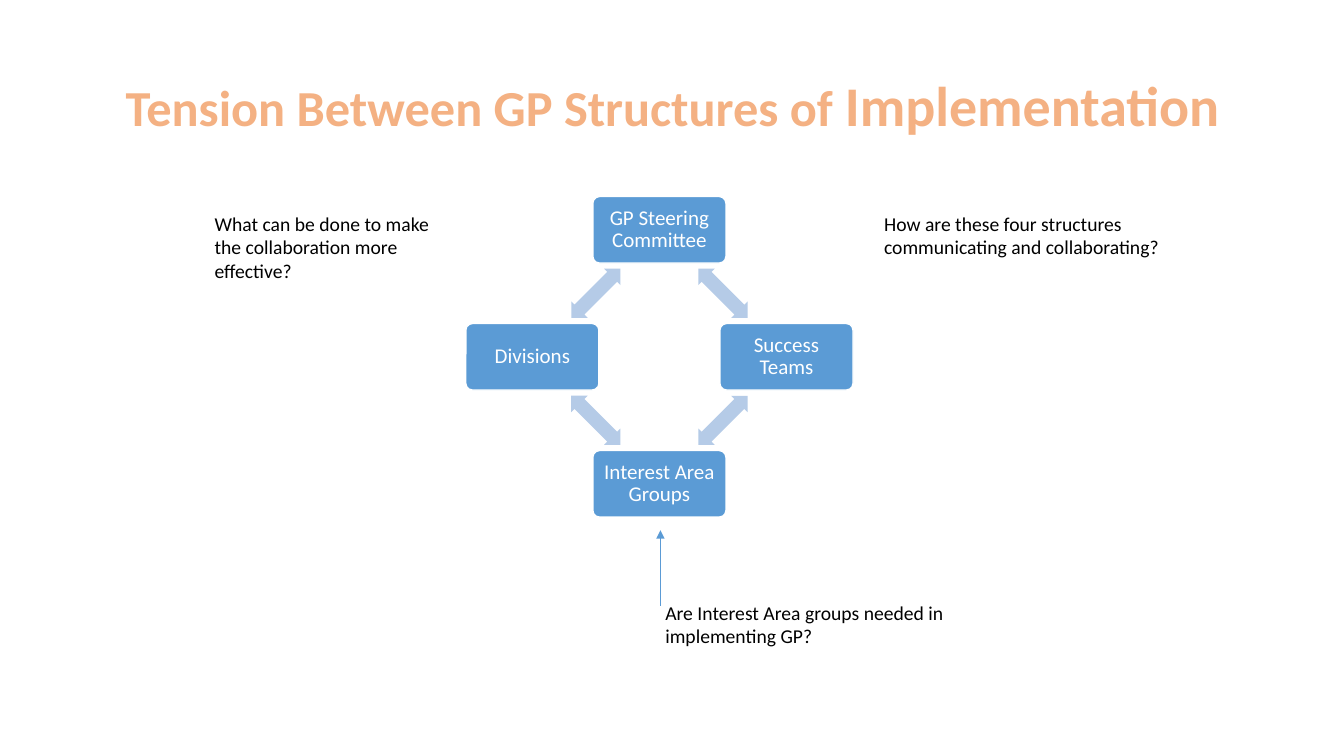
from math import cos, radians, sin

from lxml import etree
from pptx import Presentation
from pptx.dml.color import RGBColor
from pptx.enum.shapes import MSO_CONNECTOR, MSO_SHAPE
from pptx.enum.text import MSO_ANCHOR, MSO_AUTO_SIZE, PP_ALIGN
from pptx.oxml.ns import qn
from pptx.util import Inches, Pt

ROUND = MSO_SHAPE.ROUNDED_RECTANGLE
DOUBLE = MSO_SHAPE.LEFT_RIGHT_ARROW
STRAIGHT = MSO_CONNECTOR.STRAIGHT
MIDDLE = MSO_ANCHOR.MIDDLE
TOP = MSO_ANCHOR.TOP
CENTER = PP_ALIGN.CENTER
LEFT = PP_ALIGN.LEFT
FIXED = MSO_AUTO_SIZE.NONE
GROW = MSO_AUTO_SIZE.SHAPE_TO_FIT_TEXT

COLORS = {
    "title": "F4B183",
    "box": "5B9BD5",
    "arrow": "B5CBE7",
    "white": "FFFFFF",
    "black": "000000",
}
FONT = "Calibri"
MID_X, MID_Y, RADIUS = 6.54, 3.54, 1.26
BOX_W, BOX_H = 1.32, 0.66
ARROW_W, ARROW_H = 0.69, 0.23

TITLE = [("Tension Between GP Structures of ", 36), ("Implementation", 40)]
CYCLE = ["GP Steering Committee", "Success Teams", "Interest Area Groups", "Divisions"]
NOTES = [
    ("Are Interest Area groups needed in implementing GP?", 6.5, 5.91, 3.02, 0.57),
    ("How are these four structures communicating and collaborating?", 8.67, 2.05, 3, 0.57),
    ("What can be done to make the collaboration more effective?", 2.03, 2.05, 2.58, 0.81),
]


def color(name):
    return RGBColor.from_string(COLORS[name])


def put(target, values):
    for name, value in values.items():
        setattr(target, name, value)


class Deck:
    def __init__(self, width, height):
        self.deck = Presentation()
        put(self.deck, {"slide_width": Inches(width), "slide_height": Inches(height)})
        self.slide = self.deck.slides.add_slide(self.deck.slide_layouts[5])
        self.shapes = self.slide.shapes

    def label(self, shape, runs, ink, align, frame, spacing=1.0, bold=False):
        text = shape.text_frame
        put(text, {"word_wrap": True, **frame})
        para = text.paragraphs[0]
        put(para, {"alignment": align, "line_spacing": spacing})
        for words, size in runs:
            run = para.add_run()
            run.text = words
            put(run.font, {"name": FONT, "size": Pt(size), "bold": bold})
            run.font.color.rgb = color(ink)

    def title(self, runs, left, top, width, height):
        shape = self.shapes.title
        put(shape, {"left": Inches(left), "top": Inches(top),
                    "width": Inches(width), "height": Inches(height)})
        frame = {"vertical_anchor": MIDDLE, "auto_size": FIXED}
        self.label(shape, runs, "title", CENTER, frame, 0.9, True)

    def shape(self, kind, x, y, width, height, fill, adjust):
        shape = self.shapes.add_shape(kind, Inches(x - width / 2), Inches(y - height / 2),
                                      Inches(width), Inches(height))
        shape.shadow.inherit = False
        shape.fill.solid()
        shape.fill.fore_color.rgb = color(fill)
        for index, value in enumerate(adjust):
            shape.adjustments[index] = value
        return shape

    def box(self, words, x, y):
        shape = self.shape(ROUND, x, y, BOX_W, BOX_H, "box", [0.1])
        shape.line.color.rgb = color("white")
        shape.line.width = Pt(1)
        sides = ("left", "right", "top", "bottom")
        frame = {f"margin_{side}": Inches(0.06) for side in sides}
        frame["vertical_anchor"] = MIDDLE
        self.label(shape, [(words, 15)], "white", CENTER, frame, 0.9)

    def arrow(self, x, y, angle):
        shape = self.shape(DOUBLE, x, y, ARROW_W, ARROW_H, "arrow", [0.6, 0.5])
        shape.line.fill.background()
        shape.rotation = angle

    def line(self, *ends):
        line = self.shapes.add_connector(STRAIGHT, *map(Inches, ends))
        line.line.color.rgb = color("box")
        line.line.width = Pt(0.5)
        etree.SubElement(line.get_or_add_ln(), qn("a:tailEnd"), type="triangle")
        etree.SubElement(line.element.spPr, qn("a:effectLst"))

    def note(self, words, *place):
        shape = self.shapes.add_textbox(*map(Inches, place))
        frame = {"auto_size": GROW, "vertical_anchor": TOP}
        self.label(shape, [(words, 14)], "black", LEFT, frame)

    def cycle(self, names):
        step = 360 / len(names)
        reach = RADIUS * cos(radians(step / 2))
        for index, words in enumerate(names):
            turn = radians(index * step)
            self.box(words, MID_X + RADIUS * sin(turn), MID_Y - RADIUS * cos(turn))
            angle = (index + 0.5) * step
            turn = radians(angle)
            self.arrow(MID_X + reach * sin(turn), MID_Y - reach * cos(turn), angle)


def main():
    deck = Deck(13.33, 7.5)
    deck.title(TITLE, 0.92, 0.4, 11.5, 1.35)
    deck.cycle(CYCLE)
    deck.line(6.55, 6.01, 6.55, 5.26)
    for note in NOTES:
        deck.note(*note)
    deck.deck.save("out.pptx")


if __name__ == "__main__":
    main()
